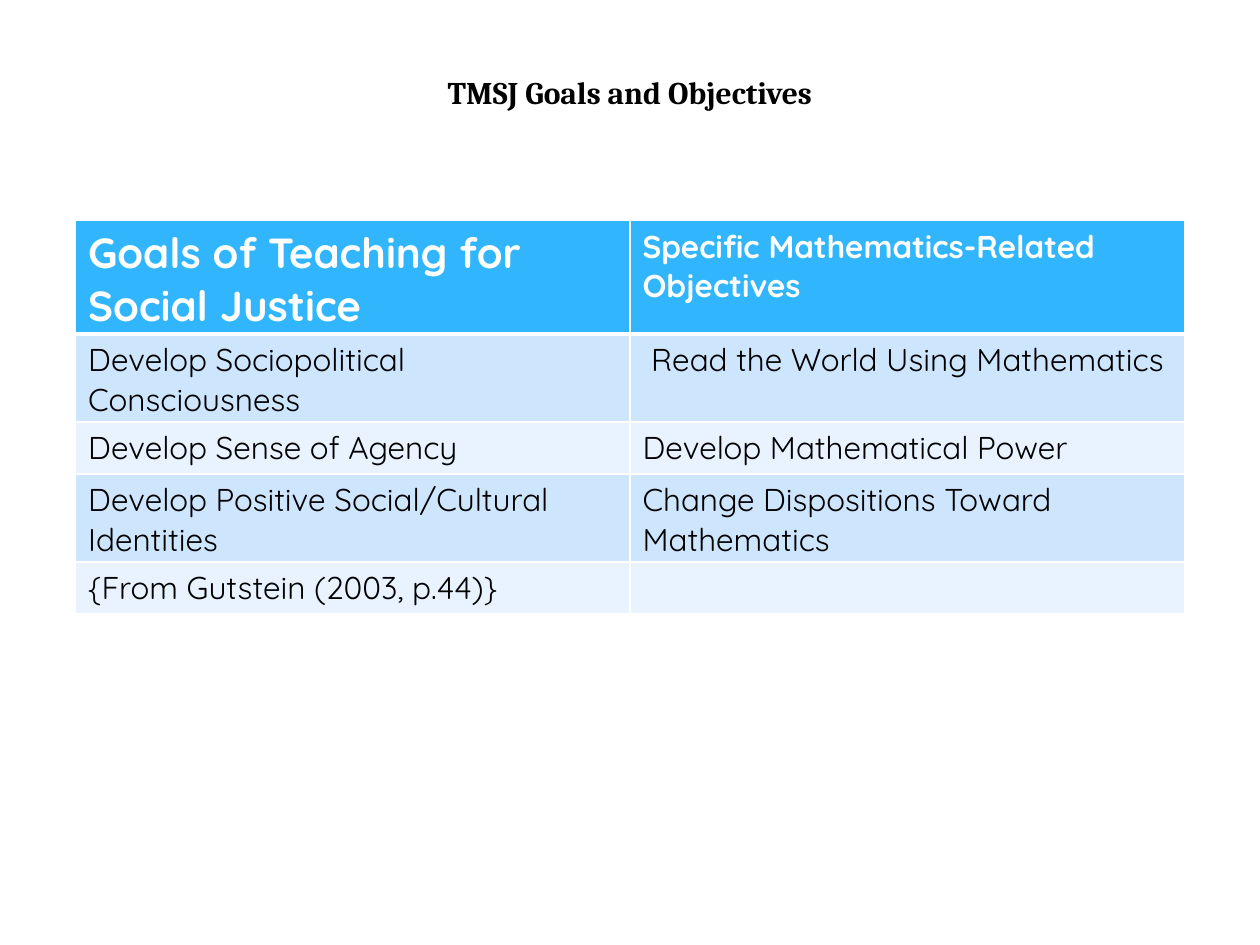
from lxml import etree
from pptx import Presentation
from pptx.dml.color import RGBColor
from pptx.enum.text import MSO_ANCHOR, PP_ALIGN
from pptx.oxml.ns import qn
from pptx.util import Pt

CENTER = PP_ALIGN.CENTER
BOTTOM = MSO_ANCHOR.BOTTOM

COLORS = {
    "text": "000000",
    "header_text": "FFFFFF",
    "header": "31B6FD",
    "odd_row": "CEE5FE",
    "even_row": "E8F3FF",
    "border": "FFFFFF",
}
TITLE_FONT = "Cambria"
TABLE_FONT = "Quicksand"
LEFT, WIDTH = Pt(43.2), Pt(633.6)
ROW_HEIGHT = Pt(29.5)

GOALS = [
    ("Goals of Teaching for Social Justice", "Specific Mathematics-Related Objectives"),
    ("Develop Sociopolitical Consciousness", " Read the World Using Mathematics"),
    ("Develop Sense of Agency", "Develop Mathematical Power"),
    ("Develop Positive Social/Cultural Identities", "Change Dispositions Toward Mathematics"),
    ("{From Gutstein (2003, p.44)}", ""),
]


def style_text(paragraph, font_name, size, color, bold):
    """Format the runs of a paragraph."""
    for run in paragraph.runs:
        run.font.name = font_name
        run.font.size = Pt(size)
        run.font.bold = bold
        run.font.color.rgb = RGBColor.from_string(COLORS[color])


def set_borders(cell, top, bottom):
    """Draw the four cell borders, with the given top and bottom widths."""
    properties = cell._tc.get_or_add_tcPr()
    for side, width in (("L", 1), ("R", 1), ("T", top), ("B", bottom)):
        line = etree.SubElement(properties, qn(f"a:ln{side}"), w=str(Pt(width)))
        fill = etree.SubElement(line, qn("a:solidFill"))
        etree.SubElement(fill, qn("a:srgbClr"), val=COLORS["border"])


def add_title(slide, text):
    """Add the centred slide title."""
    title = slide.shapes.add_textbox(LEFT, Pt(8.64), WIDTH, Pt(58.32))
    frame = title.text_frame
    frame.word_wrap = True
    frame.vertical_anchor = BOTTOM
    frame.text = text
    frame.paragraphs[0].alignment = CENTER
    style_text(frame.paragraphs[0], TITLE_FONT, 18, "text", True)


def fill_cell(cell, text, row, column):
    """Write and style one cell according to its place in the table."""
    is_header = row == 0
    set_borders(cell, 3 if row == 1 else 1, 3 if is_header else 1)
    band = "header" if is_header else "odd_row" if row % 2 else "even_row"
    cell.fill.solid()
    cell.fill.fore_color.rgb = RGBColor.from_string(COLORS[band])
    cell.text_frame.text = text
    size = 24 if is_header and column == 0 else 18
    color = "header_text" if is_header else "text"
    style_text(cell.text_frame.paragraphs[0], TABLE_FONT, size, color, is_header)


def add_goals_table(slide):
    """Add the table of goals and their objectives."""
    frame = slide.shapes.add_table(
        len(GOALS), len(GOALS[0]), LEFT, Pt(126), WIDTH, ROW_HEIGHT * len(GOALS)
    )
    for row, texts in enumerate(GOALS):
        for column, text in enumerate(texts):
            fill_cell(frame.table.cell(row, column), text, row, column)


def main():
    """Build the slide and save it."""
    presentation = Presentation()
    presentation.slide_width, presentation.slide_height = Pt(720), Pt(540)
    slide = presentation.slides.add_slide(presentation.slide_layouts[6])
    add_title(slide, "TMSJ Goals and Objectives")
    add_goals_table(slide)
    presentation.save("out.pptx")


if __name__ == "__main__":
    main()
